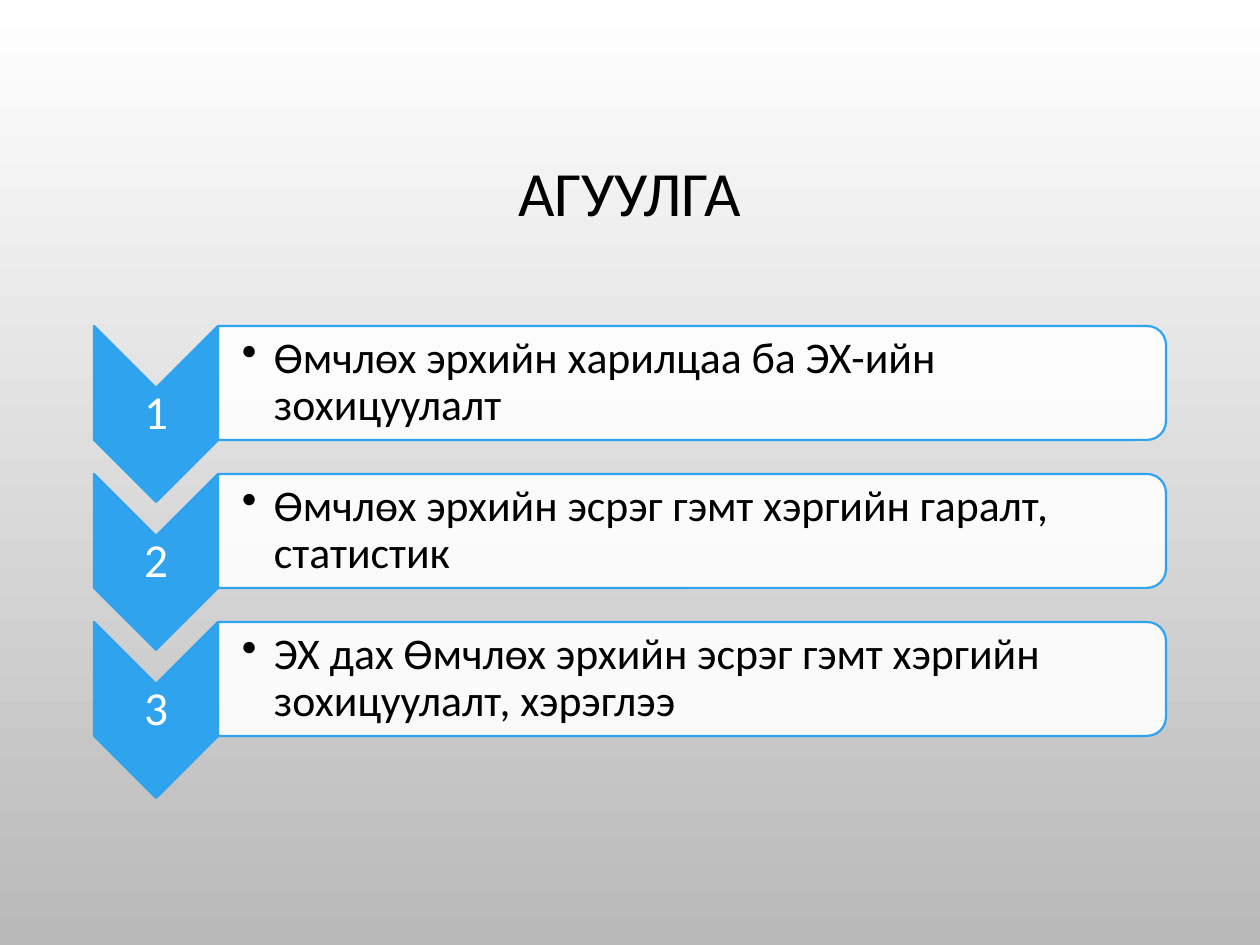
from dataclasses import dataclass

from lxml import etree
from pptx import Presentation
from pptx.dml.color import RGBColor
from pptx.enum.shapes import MSO_SHAPE
from pptx.enum.text import MSO_ANCHOR, PP_ALIGN
from pptx.oxml.ns import qn
from pptx.util import Emu, Pt

CHEVRON = MSO_SHAPE.CHEVRON
PANEL = MSO_SHAPE.ROUND_2_SAME_RECTANGLE
MIDDLE = MSO_ANCHOR.MIDDLE
CENTER = PP_ALIGN.CENTER
LEFT = PP_ALIGN.LEFT
TITLE_ONLY = 5
PX_PER_INCH = 126


@dataclass(frozen=True)
class Theme:
    font: str = "Calibri"
    ink: RGBColor = RGBColor(0, 0, 0)
    white: RGBColor = RGBColor(255, 255, 255)
    accent: RGBColor = RGBColor(0x2F, 0xA3, 0xEE)
    shade: RGBColor = RGBColor(0xB9, 0xB9, 0xB9)
    title_size: int = 36
    number_size: int = 27
    item_size: int = 25
    line_width: float = 1.25
    line_spacing: float = 0.9
    panel_opacity: int = 90


THEME = Theme()
TITLE = "АГУУЛГА"
ITEMS = [
    "Өмчлөх эрхийн харилцаа ба ЭХ-ийн зохицуулалт",
    "Өмчлөх эрхийн эсрэг гэмт хэргийн гаралт, статистик",
    "ЭХ дах Өмчлөх эрхийн эсрэг гэмт хэргийн зохицуулалт, хэрэглээ",
]


def px(value):
    return Emu(round(value * 914400 / PX_PER_INCH))


def style_text(frame, text, size, color, align):
    frame.word_wrap = True
    frame.vertical_anchor = MIDDLE
    frame.text = text
    para = frame.paragraphs[0]
    para.alignment = align
    para.line_spacing = THEME.line_spacing
    font = para.runs[0].font
    font.name = THEME.font
    font.size = Pt(size)
    font.color.rgb = color
    return para


def add_text(shapes, box, text, size, color, align, inset=2):
    frame = shapes.add_textbox(*map(px, box)).text_frame
    frame.margin_left = px(inset)
    frame.margin_top = frame.margin_right = frame.margin_bottom = px(2)
    return style_text(frame, text, size, color, align)


def add_turned_shape(shapes, kind, box, fill):
    left, top, width, height = box
    shift = (width - height) / 2
    shape = shapes.add_shape(
        kind, px(left + shift), px(top - shift), px(height), px(width))
    shape.rotation = 90
    shape.shadow.inherit = False
    shape.fill.solid()
    shape.fill.fore_color.rgb = fill
    shape.line.color.rgb = THEME.accent
    shape.line.width = Pt(THEME.line_width)
    return shape


def set_opacity(shape, percent):
    color = shape._element.spPr.find(qn("a:solidFill"))[0]
    etree.SubElement(color, qn("a:alpha"), val=str(percent * 1000))


def add_bullet(para, indent):
    properties = para._p.get_or_add_pPr()
    properties.set("marL", str(px(indent)))
    properties.set("indent", str(px(-indent)))
    etree.SubElement(properties, qn("a:buChar"), char="•")


def build_background(page):
    fill = page.background.fill
    fill.gradient()
    fill.gradient_angle = 270
    for stop, color in zip(fill.gradient_stops, (THEME.white, THEME.shade)):
        stop.color.rgb = color


def build_title(page, box):
    title = page.shapes.title
    title.left, title.top, title.width, title.height = map(px, box)
    style_text(title.text_frame, TITLE, THEME.title_size, THEME.ink, CENTER)


def build_row(shapes, box, number, text):
    left, top, width, height = box
    arrow_width = 124
    half = arrow_width // 2
    panel_left = left + arrow_width
    panel_width = width - arrow_width
    panel_height = height - half

    add_turned_shape(shapes, CHEVRON, (left, top, arrow_width, height), THEME.accent)
    add_text(shapes, (left, top + half, arrow_width, panel_height - half),
             str(number), THEME.number_size, THEME.white, CENTER)

    panel = add_turned_shape(
        shapes, PANEL, (panel_left, top, panel_width, panel_height), THEME.white)
    set_opacity(panel, THEME.panel_opacity)
    para = add_text(shapes, (panel_left, top + 6, panel_width - 6, panel_height - 12),
                    text, THEME.item_size, THEME.ink, LEFT, inset=24)
    para.level = 1
    add_bullet(para, 32)


def build_list(page, box):
    left, top, width, height = box
    row_height = 176
    pitch = (height - row_height) / (len(ITEMS) - 1)
    group = page.shapes.add_group_shape()
    for index, text in enumerate(ITEMS):
        row = (left, top + index * pitch, width, row_height)
        build_row(group.shapes, row, index + 1, text)


def main():
    deck = Presentation()
    deck.slide_width = px(1260)
    deck.slide_height = px(945)
    page = deck.slides.add_slide(deck.slide_layouts[TITLE_ONLY])
    build_background(page)
    build_title(page, (94, 86, 1071, 220))
    build_list(page, (94, 326, 1072, 472))
    deck.save("out.pptx")


if __name__ == "__main__":
    main()
